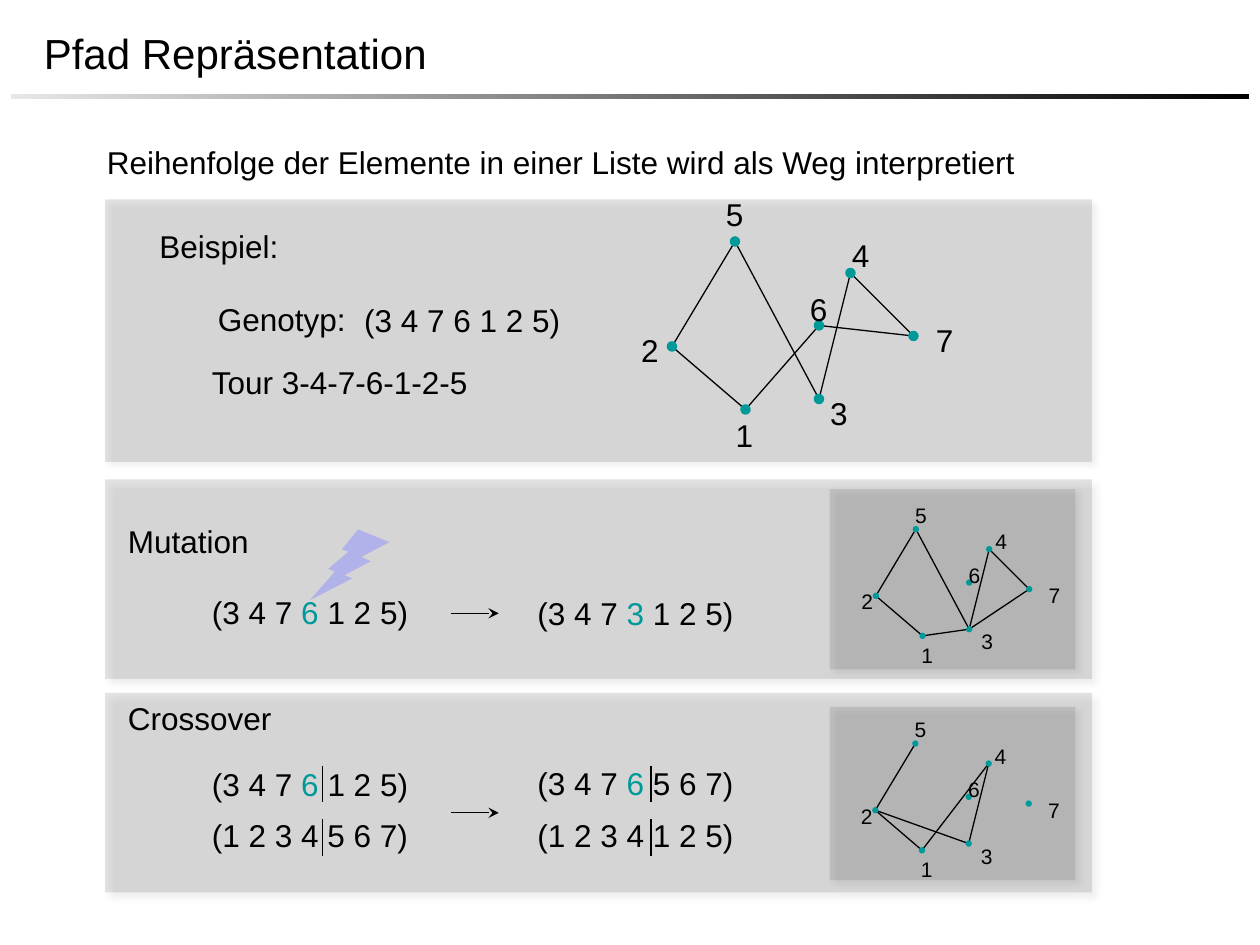
from itertools import pairwise

from pptx import Presentation
from pptx.dml.color import RGBColor
from pptx.enum.shapes import MSO_CONNECTOR, MSO_SHAPE
from pptx.enum.text import MSO_ANCHOR, MSO_AUTO_SIZE
from pptx.oxml import parse_xml
from pptx.oxml.ns import nsdecls
from pptx.util import Pt

COLORS = {"text": "000000", "accent": "009999", "panel": "5F5F5F",
          "bolt": "9090FF", "rule_start": "E7E7E7"}
RGB = {name: RGBColor.from_string(value) for name, value in COLORS.items()}

presentation = Presentation()
presentation.slide_width, presentation.slide_height = Pt(720), Pt(540)
slide = presentation.slides.add_slide(presentation.slide_layouts[6])
shapes = slide.shapes


def add_text(parts, left, top, width, height=28.8, size=18, **frame_format):
    """Add a text box; every second part is in the accent colour."""
    box = shapes.add_textbox(Pt(left), Pt(top), Pt(width), Pt(height))
    frame = box.text_frame
    settings = {"word_wrap": True, "auto_size": MSO_AUTO_SIZE.SHAPE_TO_FIT_TEXT}
    for name, value in (settings | frame_format).items():
        setattr(frame, name, value)
    for index, part in enumerate(parts):
        run = frame.paragraphs[0].add_run()
        run.text = part
        for name, value in {"name": "Arial", "size": Pt(size)}.items():
            setattr(run.font, name, value)
        run.font.color.rgb = RGB["accent" if index % 2 else "text"]


def add_line(start, end, arrow=False):
    line = shapes.add_connector(MSO_CONNECTOR.STRAIGHT, *map(Pt, start + end))
    line.line.width = Pt(0.75)
    line.line.color.rgb = RGB["text"]
    if arrow:
        line.line._get_or_add_ln().append(
            parse_xml(f'<a:tailEnd {nsdecls("a")} type="stealth"/>'))
    line._element.spPr.append(parse_xml(f'<a:effectLst {nsdecls("a")}/>'))


# Title and rule
rule = shapes.add_shape(MSO_SHAPE.RECTANGLE, Pt(6), Pt(54), Pt(708), Pt(2.5))
rule.shadow.inherit = False
rule.line.fill.background()
rule.fill.gradient()
rule.fill.gradient_angle = 0
for stop, color in zip(rule.fill.gradient_stops, ("rule_start", "text")):
    stop.color.rgb = RGB[color]
add_text(["Pfad Repräsentation"], 18, 6, 648, 48, size=24,
         auto_size=MSO_AUTO_SIZE.NONE, vertical_anchor=MSO_ANCHOR.MIDDLE)

# Translucent panels and lightning bolt
SHADOW = f"""<a:effectLst {nsdecls("a")}>
  <a:outerShdw blurRad="{Pt(4)}" dist="{Pt(3)}" dir="2700000" algn="tl" rotWithShape="0">
    <a:srgbClr val="000000"><a:alpha val="40000"/></a:srgbClr>
  </a:outerShdw></a:effectLst>"""
translucent_shapes = [
    ("panel", 60, 396, 564, 114),
    ("panel", 60, 274, 564, 114),
    ("panel", 60, 114, 564, 150),
    ("panel", 474, 279.5, 140.5, 103),
    ("panel", 474, 404, 140.5, 99),
    ("bolt", 177, 302.5, 45.5, 40.5),
]
for kind, *bounds in translucent_shapes:
    is_panel = kind == "panel"
    preset = MSO_SHAPE.RECTANGLE if is_panel else MSO_SHAPE.LIGHTNING_BOLT
    shape = shapes.add_shape(preset, *map(Pt, bounds))
    shape.line.fill.background()
    shape.fill.solid()
    shape.fill.fore_color.rgb = RGB[kind]
    properties = shape._element.spPr
    color = properties.find(".//{*}solidFill/{*}srgbClr")
    alpha = 17000 if is_panel else 50000
    color.append(parse_xml(f'<a:alpha {nsdecls("a")} val="{alpha}"/>'))
    if is_panel:
        properties.append(parse_xml(SHADOW))
    else:
        shape.shadow.inherit = False
        properties.xfrm.set("flipH", "1")

# Headings and gene lists
for text, left, top, width in [
    ("Beispiel:", 84, 126, 88),
    ("Genotyp:", 117.5, 168, 88.5),
    ("Mutation", 66, 295, 89),
    ("Crossover", 66, 396, 97),
]:
    add_text([text], left, top, width, word_wrap=False)

BEFORE, AFTER = 114, 300
for parts, left, top, width in [
    (["Reihenfolge der Elemente in einer Liste wird als Weg interpretiert"],
     54, 78, 564),
    (["(3 4 7 6 1 2 5)"], 201, 168.5, 168),
    (["Tour 3-4-7-6-1-2-5"], BEFORE, 204, 252),
    (["(3 4 7 ", "6 ", "1 2 5)"], BEFORE, 335.5, 228),
    (["(3 4 7 ", "3", " 1 2 5)"], AFTER, 336, 228),
    (["(3 4 7 ", "6 ", "1 2 5)"], BEFORE, 433.5, 228),
    (["(1 2 3 4 5 6 7)"], BEFORE, 463, 228),
    (["(3 4 7 ", "6", " 5 6 7)"], AFTER, 433, 228),
    (["(1 2 3 4 1 2 5)"], AFTER, 463, 228),
]:
    add_text(parts, left, top, width)

# Crossover cuts and arrows
for x in (184.5, 372):
    for y in (437.5, 468):
        add_line((x, y), (x, y + 21))
for y in (350.5, 464.5):
    add_line((258, y), (285, y), arrow=True)

# Tour graphs: city and label centres relative to city 2
CITIES = {1: (42, 36), 2: (0, 0), 3: (84, 30), 4: (102, -42),
          5: (36, -60), 6: (84, -12), 7: (138, -6)}
LABELS = {1: (41.5, 50.4), 2: (-12.5, 2), 3: (95.5, 38), 4: (108, -52),
          5: (36, -75.6), 6: (84, -21.6), 7: (156, -3.6)}
LARGE = {"scale": 1, "dot": 6, "size": 18, "box": (24.5, 28.8), "shift": (0, 0)}
SMALL = {"scale": 0.635, "dot": 3.6, "size": 12, "box": (20.9, 21.6), "shift": (3, 2)}
graphs = [
    ((384, 198), LARGE, (3, 4, 7, 6, 1, 2, 5, 3)),
    ((500.5, 340.5), SMALL, (5, 2, 1, 3, 7, 4, 3, 5)),
    ((500.2, 463), SMALL, (5, 2, 1, 4, 3, 2)),
]
for (origin_x, origin_y), style, tour in graphs:
    scale, dot = style["scale"], style["dot"]
    centres = {city: (origin_x + scale * x, origin_y + scale * y)
               for city, (x, y) in CITIES.items()}
    for start, end in pairwise(tour):
        add_line(centres[start], centres[end])
    for x, y in centres.values():
        marker = shapes.add_shape(MSO_SHAPE.OVAL, Pt(x - dot / 2), Pt(y - dot / 2),
                                  Pt(dot), Pt(dot))
        marker.shadow.inherit = False
        marker.line.fill.background()
        marker.fill.solid()
        marker.fill.fore_color.rgb = RGB["accent"]
    width, height = style["box"]
    shift_x, shift_y = style["shift"]
    for city, (x, y) in LABELS.items():
        add_text([str(city)], origin_x + scale * x + shift_x - width / 2,
                 origin_y + scale * y + shift_y - height / 2, width, height,
                 style["size"], word_wrap=False)

presentation.save("out.pptx")
